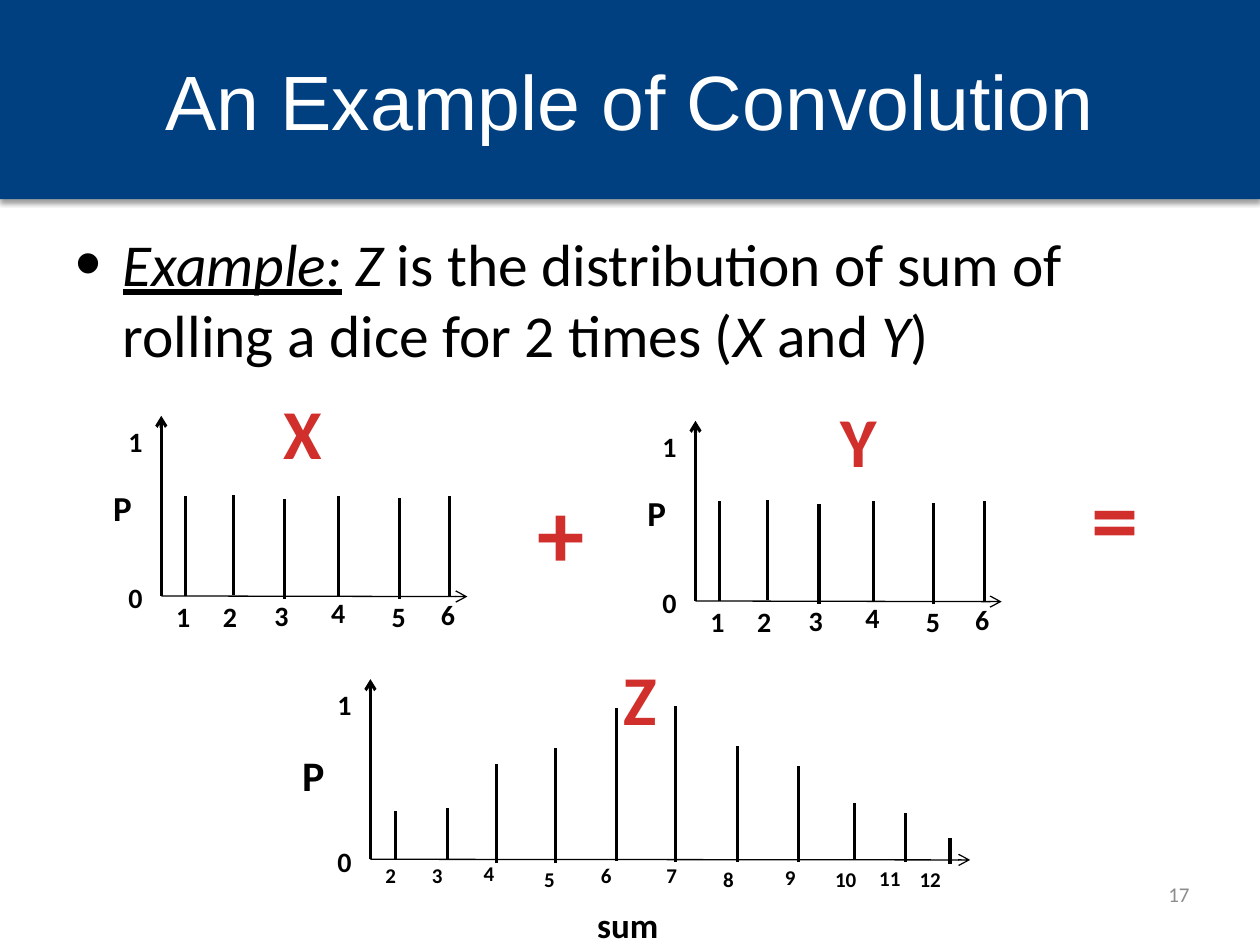
"""Builds a slide showing the convolution of two dice distributions."""
import pptx
import pptx.dml.color
import pptx.enum.shapes
import pptx.enum.text
import pptx.oxml
import pptx.oxml.ns
import pptx.util
from lxml import etree

NAVY = pptx.dml.color.RGBColor(0x00, 0x40, 0x80)
WHITE = pptx.dml.color.RGBColor(0xFF, 0xFF, 0xFF)
BLACK = pptx.dml.color.RGBColor(0x00, 0x00, 0x00)
GREY = pptx.dml.color.RGBColor(0x8C, 0x8C, 0x8C)
RED = pptx.dml.color.RGBColor(0xD0, 0x2F, 0x2C)
ALIGN = pptx.enum.text.PP_ALIGN
ANCHOR = pptx.enum.text.MSO_ANCHOR

deck = pptx.Presentation()
deck.slide_width = pptx.util.Inches(10)
deck.slide_height = pptx.util.Inches(7.5)
COL = deck.slide_width // 100
ROW = deck.slide_height // 75


def add_label(shapes, text, x, y, width, height, size, color=BLACK, bold=True, align=ALIGN.LEFT):
    label = shapes.add_textbox(round(x * COL), round(y * ROW), round(width * COL), round(height * ROW))
    frame = label.text_frame
    frame.word_wrap = False
    frame.auto_size = pptx.enum.text.MSO_AUTO_SIZE.SHAPE_TO_FIT_TEXT
    line = frame.paragraphs[0]
    line.text = text
    line.alignment = align
    line.font.name = "Calibri"
    line.font.size = pptx.util.Pt(size)
    line.font.bold = bold
    line.font.color.rgb = color
    return label


def add_stroke(shapes, x1, y1, x2, y2, weight=1.75, arrow=False):
    stroke = shapes.add_connector(
        pptx.enum.shapes.MSO_CONNECTOR.STRAIGHT,
        round(x1 * COL), round(y1 * ROW), round(x2 * COL), round(y2 * ROW))
    stroke.line.color.rgb = BLACK
    stroke.line.width = pptx.util.Pt(weight)
    if arrow:
        etree.SubElement(stroke.line._get_or_add_ln(), pptx.oxml.ns.qn("a:tailEnd"), type="arrow")
    etree.SubElement(stroke._element.spPr, pptx.oxml.ns.qn("a:effectLst"))


slide = deck.slides.add_slide(deck.slide_layouts[1])
title, body = slide.placeholders

banner = slide.shapes.add_shape(
    pptx.enum.shapes.MSO_SHAPE.RECTANGLE, 0, 0, deck.slide_width, round(15.8 * ROW))
banner.fill.solid()
banner.fill.fore_color.rgb = NAVY
banner.line.fill.background()
banner._element.spPr.append(pptx.oxml.parse_xml(
    '<a:effectLst xmlns:a="http://schemas.openxmlformats.org/drawingml/2006/main">'
    '<a:outerShdw blurRad="39370" dist="20320" dir="5400000" rotWithShape="0">'
    '<a:srgbClr val="000000"><a:alpha val="38000"/></a:srgbClr>'
    '</a:outerShdw></a:effectLst>'))
slide.shapes._spTree.insert(2, banner._element)

title.left, title.top = 5 * COL, round(1.7 * ROW)
title.width, title.height = 90 * COL, round(12.5 * ROW)
heading = title.text_frame.paragraphs[0]
heading.text = "An Example of Convolution"
heading.alignment = ALIGN.CENTER
heading.font.name = "Arial"
heading.font.size = pptx.util.Pt(44)
heading.font.color.rgb = WHITE

body.left, body.top = 5 * COL, round(17.5 * ROW)
body.width, body.height = 90 * COL, round(49.5 * ROW)
example = body.text_frame.paragraphs[0]
bullet = example._p.get_or_add_pPr()
etree.SubElement(bullet, pptx.oxml.ns.qn("a:buSzPct"), val="125000")
etree.SubElement(bullet, pptx.oxml.ns.qn("a:buChar"), char="•")
example.font.name = "Calibri"
example.font.size = pptx.util.Pt(34)
example.font.color.rgb = BLACK
for words, italic, underline in (
        ("Example:", True, True), (" ", False, False), ("Z", True, False),
        (" is the distribution of sum of rolling a dice for 2 times (", False, False),
        ("X", True, False), (" and ", False, False), ("Y", True, False), (")", False, False)):
    run = example.add_run()
    run.text = words
    run.font.italic = italic
    run.font.underline = underline

page = add_label(slide.shapes, "17", 72.1, 69, 23.3, 4, 12, GREY, False, ALIGN.RIGHT)
page.text_frame.word_wrap = True
page.text_frame.auto_size = pptx.enum.text.MSO_AUTO_SIZE.NONE
page.text_frame.vertical_anchor = ANCHOR.MIDDLE

# face, stem x, stem foot, stem height, label x, label y
DICE = (
    (1, 1.9, 0, 7.9, 0.2, -0.2), (2, 5.7, -0.1, 8, 3.9, -0.2), (3, 9.8, 0.2, 7.7, 8, -0.3),
    (4, 14.1, 0, 7.9, 12.5, -0.5), (5, 18.9, 0.2, 7.8, 17.3, -0.2), (6, 22.9, 0.1, 7.9, 21.2, -0.4))
SUMS = (
    (2, 2, 0, 3.8, 0.2, -0.2), (3, 6.1, 0, 4.1, 3.9, -0.2), (4, 10, 0.3, 7.6, 8, -0.4),
    (5, 14.7, 0.3, 8.8, 12.8, 0.1), (6, 19.5, 0.1, 12, 17.3, -0.2), (7, 24.2, 0.2, 12.2, 22.5, -0.2),
    (8, 29.1, 0.2, 9, 27, 0.1), (9, 34, 0.2, 7.4, 31.9, -0.1), (10, 38.4, 0, 4.5, 35.9, 0.1),
    (11, 42.5, 0.2, 3.7, 39.4, 0), (12, 46, 0.4, 1.7, 42.6, 0.1))

for x0, y0, reach, stems, face_size, face_width, face_height, p_x, p_width, p_height, p_size in (
        (29.4, 68.2, 47.6, SUMS, 12, 3.5, 4.4, -6.4, 3.8, 5, 24),
        (12.8, 47.3, 24.3, DICE, 16, 3.2, 3.7, -4.8, 3.5, 4.4, 20),
        (55.2, 47.7, 24.3, DICE, 16, 3.2, 3.7, -4.8, 3.5, 4.4, 20)):
    plot = slide.shapes.add_group_shape().shapes
    add_stroke(plot, x0, y0, x0 + reach, y0 + 0.05, 0.75, True)
    add_stroke(plot, x0, y0, x0, y0 - 14.3, arrow=True)
    add_label(plot, "1", x0 - 3.6, y0 - 14.1, 3.3, 2, 16)
    add_label(plot, "0", x0 - 3.6, y0 - 1.7, 3.3, 2, 16)
    add_label(plot, "P", x0 + p_x, y0 - 9.2, p_width, p_height, p_size)
    for face, x, foot, height, face_x, face_y in stems:
        add_stroke(plot, x0 + x, y0 + foot, x0 + x, y0 - height)
        width = face_width + 1.1 * (face > 9)
        add_label(plot, str(face), x0 + face_x, y0 + face_y, width, face_height, face_size)

add_label(slide.shapes, "sum", 46.4, 71.2, 6.9, 4.4, 20)
for symbol, x, y, width, height, size in (
        ("X", 21.5, 30.4, 5.1, 7.7, 40), ("+", 41.6, 37.1, 5.8, 10.1, 54),
        ("Y", 65.7, 31.1, 4.9, 7.7, 40), ("=", 85.6, 35.9, 5.8, 10.1, 54),
        ("Z", 48.5, 51.5, 4.7, 7.7, 40)):
    add_label(slide.shapes, symbol, x, y, width, height, size, RED, align=ALIGN.CENTER)

deck.save("out.pptx")
